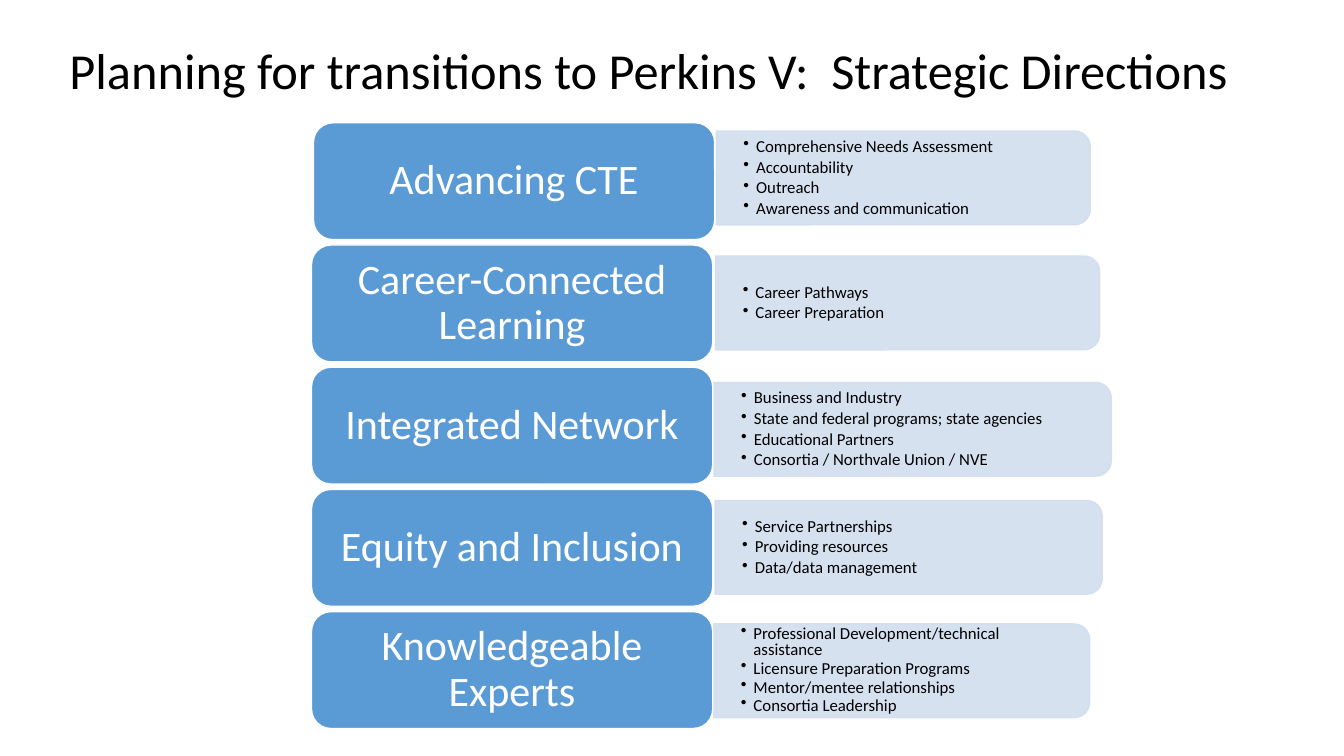
import pptx
import pptx.util
import pptx.dml.color
import pptx.enum.shapes
import pptx.enum.text
import pptx.oxml.ns
import lxml.etree

Pt = pptx.util.Pt
qn = pptx.oxml.ns.qn
SHAPES = pptx.enum.shapes.MSO_SHAPE
ALIGN = pptx.enum.text.PP_ALIGN

TITLE = "Planning for transitions to Perkins V:  Strategic Directions"
# Label, label left, panel (left, top, width), line spacing, bullets
DIRECTIONS = [
    ("Advancing CTE", 223.9, (511.7, 93.6, 267.1), 0.9,
     ["Comprehensive Needs Assessment", "Accountability", "Outreach",
      "Awareness and communication"]),
    ("Career-Connected Learning", 222.5, (511.2, 182.9, 274.3), 0.9,
     ["Career Pathways", "Career Preparation"]),
    ("Integrated Network", 222.5, (510.1, 273.2, 283.7), 0.9,
     ["Business and Industry", "State and federal programs; state agencies",
      "Educational Partners", "Consortia / Northvale Union / NVE"]),
    ("Equity and Inclusion", 222.5, (510.8, 357.5, 276.5), 0.9,
     ["Service Partnerships", "Providing resources", "Data/data management"]),
    ("Knowledgeable Experts", 222.5, (509.8, 445.7, 268.6), 0.8,
     ["Professional Development/technical assistance",
      "Licensure Preparation Programs", "Mentor/mentee relationships",
      "Consortia Leadership"]),
]
COLORS = {"label": "5B9BD5", "panel": "D2DEEF", "white": "FFFFFF", "black": "000000"}
FONT = "Calibri"
LABEL_TOP, LABEL_PITCH, LABEL_W, LABEL_H = 87.7, 87.3, 286.6, 83.5
PANEL_H = 67
BULLET_INDENT = 9


def rgb(name):
    return pptx.dml.color.RGBColor.from_string(COLORS[name])


def write(sp, lines, size, color, align=ALIGN.LEFT, spacing=0.9, after=0, inset=7.2, bullet=False):
    tf = sp.text_frame
    tf.word_wrap = True
    tf.vertical_anchor = pptx.enum.text.MSO_ANCHOR.MIDDLE
    tf.margin_left = tf.margin_right = Pt(inset)
    tf.margin_top = tf.margin_bottom = 0
    for i, line in enumerate(lines):
        p = tf.add_paragraph() if i else tf.paragraphs[0]
        p.alignment, p.line_spacing, p.space_after = align, spacing, Pt(after)
        r = p.add_run()
        r.text = line
        r.font.name, r.font.size = FONT, Pt(size)
        r.font.color.rgb = rgb(color)
        if bullet:
            pPr = p._p.get_or_add_pPr()
            pPr.set("marL", str(Pt(BULLET_INDENT)))
            pPr.set("indent", str(-Pt(BULLET_INDENT)))
            lxml.etree.SubElement(pPr, qn("a:buChar"), char="•")
            # The bullet takes its size from the paragraph end
            lxml.etree.SubElement(p._p, qn("a:endParaRPr"), sz=str(size * 100))


def add_box(slide, kind, left, top, width, height, fill, line, opacity=None):
    sp = slide.shapes.add_shape(kind, Pt(left), Pt(top), Pt(width), Pt(height))
    sp.shadow.inherit = False
    sp.fill.solid()
    sp.fill.fore_color.rgb = rgb(fill)
    sp.line.color.rgb = rgb(line)
    sp.line.width = Pt(1)
    if opacity:
        for clr in sp._element.spPr.iter(qn("a:srgbClr")):
            lxml.etree.SubElement(clr, qn("a:alpha"), val=str(opacity * 1000))
    return sp


def add_text(slide, left, top, width, height, lines, **fmt):
    write(slide.shapes.add_textbox(Pt(left), Pt(top), Pt(width), Pt(height)), lines, **fmt)


def main():
    prs = pptx.Presentation()
    prs.slide_width, prs.slide_height = Pt(960), Pt(540)
    slide = prs.slides.add_slide(prs.slide_layouts[6])

    # Title
    add_text(slide, 42.5, 0.7, 917.5, 103, [TITLE], size=36, color="black")

    for i, (label, label_left, (left, top, width), spacing, bullets) in enumerate(DIRECTIONS):
        # Panel: an upright shape turned a quarter so its round corners face right
        shift = (width - PANEL_H) / 2
        panel = add_box(slide, SHAPES.ROUND_2_SAME_RECTANGLE, left + shift, top - shift,
                        PANEL_H, width, "panel", "panel", opacity=90)
        panel.rotation = 90
        add_text(slide, left, top, width - 3.3, PANEL_H, bullets, size=12, color="black",
                 spacing=spacing, after=1.8, inset=19.4, bullet=True)

        # Label
        sp = add_box(slide, SHAPES.ROUNDED_RECTANGLE, label_left, LABEL_TOP + i * LABEL_PITCH,
                     LABEL_W, LABEL_H, "label", "white")
        write(sp, [label], size=30, color="white", align=ALIGN.CENTER, inset=13)

    prs.save("out.pptx")


if __name__ == "__main__":
    main()
